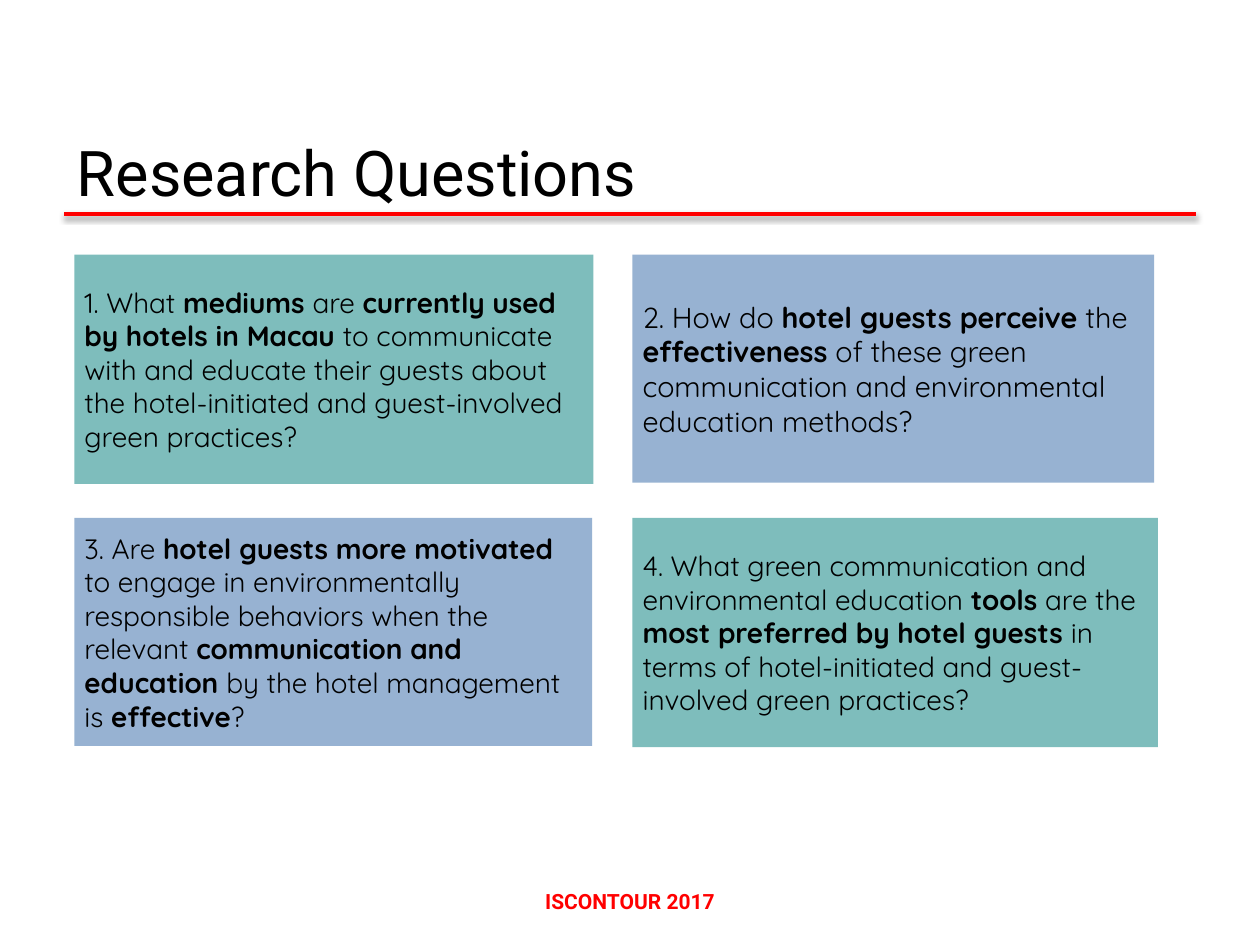
from lxml import etree
from pptx import Presentation
from pptx.dml.color import RGBColor
from pptx.enum.shapes import MSO_CONNECTOR, MSO_SHAPE
from pptx.enum.text import MSO_ANCHOR, MSO_AUTO_SIZE, PP_ALIGN
from pptx.oxml import parse_xml
from pptx.oxml.ns import nsdecls, qn
from pptx.util import Inches, Pt

COLORS = {"teal": "48A2A0", "blue": "6C92C0", "red": "FF0000", "black": "000000"}
TITLE = "Research Questions"
FOOTER = "ISCONTOUR 2017"
LEFTS, TOPS = (0.59, 5.02), (2.02, 4.11)

# Fill, width, height, text size, then text pieces: plain and bold in turn
QUESTIONS = [
    ("teal", 4.12, 1.82, 16, [
        "1. What ", "mediums ", "are ", "currently used by hotels in Macau ",
        "to communicate with and educate their guests about the "
        "hotel-initiated and guest-involved green practices?"]),
    ("blue", 4.14, 1.81, 16.5, [
        "2. How do ", "hotel guests perceive ", "the ", "effectiveness",
        " of these green communication and environmental education methods?"]),
    ("blue", 4.11, 1.81, 16, [
        "3. Are ", "hotel guests more motivated ",
        "to engage in environmentally responsible behaviors when the relevant ",
        "communication and education ", "by the hotel management is ",
        "effective", "?"]),
    ("teal", 4.17, 1.82, 16, [
        "4. What green communication and environmental education ", "tools",
        " are the ", "most preferred by hotel guests ",
        "in terms of hotel-initiated and guest-involved green practices?"]),
]


def color(name):
    return RGBColor.from_string(COLORS[name])


def style(font, face, size, name, bold=False):
    font.name, font.size, font.bold = face, Pt(size), bold
    font.color.rgb = color(name)


def add_title(slide):
    title = slide.shapes.title
    title.left, title.top = Inches(0.51), Inches(0.21)
    title.width, title.height = Inches(8.98), Inches(1.5)
    frame = title.text_frame
    frame.text = TITLE
    frame.auto_size = MSO_AUTO_SIZE.NONE
    frame.vertical_anchor = MSO_ANCHOR.BOTTOM
    frame.paragraphs[0].alignment = PP_ALIGN.LEFT
    style(frame.paragraphs[0].runs[0].font, "Roboto", 36, "black")


def add_rule(slide):
    rule = slide.shapes.add_connector(
        MSO_CONNECTOR.STRAIGHT, Inches(0.51), Inches(1.7), Inches(9.49), Inches(1.7))
    rule.line.color.rgb = color("red")
    rule.line.width = Pt(2)
    rule._element.spPr.append(parse_xml(
        f'<a:effectLst {nsdecls("a")}>'
        '<a:outerShdw blurRad="40000" dist="20000" dir="5400000" rotWithShape="0">'
        f'<a:srgbClr val="{COLORS["black"]}"><a:alpha val="38000"/></a:srgbClr>'
        '</a:outerShdw></a:effectLst>'))


def add_footer(slide):
    box = slide.shapes.add_textbox(Inches(3.19), Inches(7), Inches(3.62), Inches(0.3))
    frame = box.text_frame
    frame.word_wrap = True
    frame.text = FOOTER
    frame.auto_size = MSO_AUTO_SIZE.SHAPE_TO_FIT_TEXT
    frame.paragraphs[0].alignment = PP_ALIGN.CENTER
    style(frame.paragraphs[0].runs[0].font, "Roboto", 12, "red", True)


def add_question(slide, index, fill, width, height, size, pieces):
    row, col = divmod(index, 2)
    card = slide.shapes.add_shape(
        MSO_SHAPE.RECTANGLE, Inches(LEFTS[col]), Inches(TOPS[row]),
        Inches(width), Inches(height))
    card.shadow.inherit = False
    card.line.fill.background()
    card.fill.solid()
    card.fill.fore_color.rgb = color(fill)
    tint = card._element.spPr.find(qn("a:solidFill"))[0]
    etree.SubElement(tint, qn("a:alpha")).set("val", "70000")

    frame = card.text_frame
    frame.word_wrap = True
    frame.vertical_anchor = MSO_ANCHOR.MIDDLE
    frame.margin_left = frame.margin_right = Inches(0.08)
    frame.margin_top = frame.margin_bottom = Inches(0.04)
    para = frame.paragraphs[0]
    para.alignment = PP_ALIGN.LEFT
    for order, piece in enumerate(pieces):
        run = para.add_run()
        run.text = piece
        style(run.font, "Quicksand", size, "black", order % 2 == 1)


def main():
    deck = Presentation()
    deck.slide_width, deck.slide_height = Inches(10), Inches(7.5)
    slide = deck.slides.add_slide(deck.slide_layouts[5])
    add_rule(slide)
    add_footer(slide)
    add_title(slide)
    for index, question in enumerate(QUESTIONS):
        add_question(slide, index, *question)
    deck.save("out.pptx")


if __name__ == "__main__":
    main()
